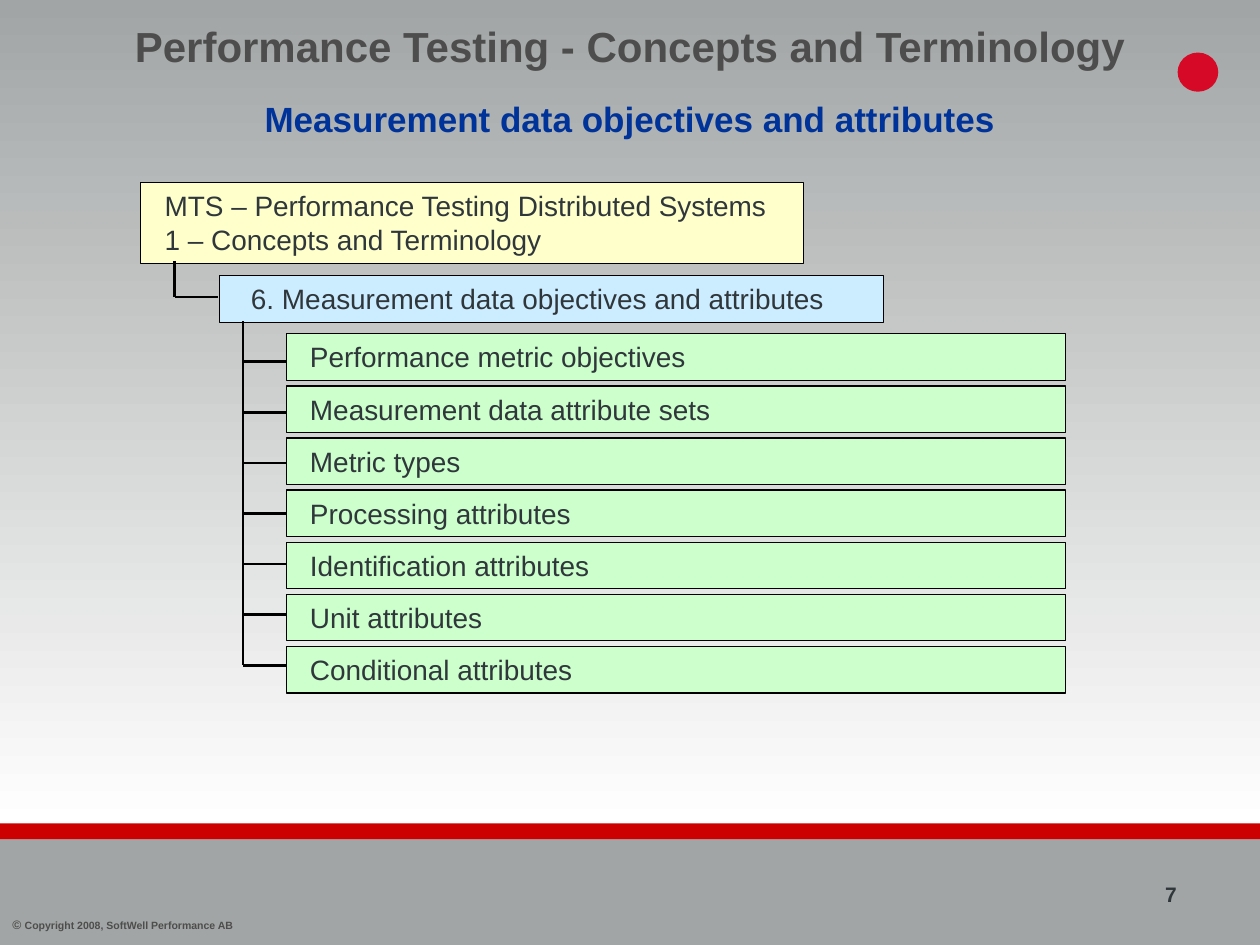
import pptx
import pptx.util
import pptx.dml.color
import pptx.enum.dml
import pptx.enum.shapes
import pptx.enum.text
from dataclasses import dataclass
from lxml import etree

Cm = pptx.util.Cm
Pt = pptx.util.Pt
RGB = pptx.dml.color.RGBColor.from_string
SHAPE = pptx.enum.shapes.MSO_SHAPE
ALIGN = pptx.enum.text.PP_ALIGN
ANCHOR = pptx.enum.text.MSO_ANCHOR


@dataclass(frozen=True)
class Theme:
    font: str = "Arial"
    gray: str = "A2A5A5"
    white: str = "FFFFFF"
    red: str = "CC0000"
    emblem: str = "D60A27"
    heading: str = "4D4D4D"
    subheading: str = "003399"
    ink: str = "30373B"
    line: str = "000000"
    course: str = "FFFFCC"
    chapter: str = "CCECFF"
    topic: str = "CCFFCC"
    title_size: int = 24
    subtitle_size: int = 20
    body_size: int = 16
    number_size: int = 12
    sign_size: int = 7
    copyright_size: int = 6


theme = Theme()
deck = pptx.Presentation()
deck.slide_width = Cm(25.4)
deck.slide_height = Cm(19.05)
slide = deck.slides.add_slide(deck.slide_layouts[6])


def add_block(kind, left, top, width, height, color, outline=None):
    block = slide.shapes.add_shape(kind, Cm(left), Cm(top), Cm(width), Cm(height))
    block.shadow.inherit = False
    block.fill.solid()
    block.fill.fore_color.rgb = RGB(color)
    if outline:
        block.line.color.rgb = RGB(outline)
        block.line.width = Pt(0.75)
    else:
        block.line.fill.background()
    return block


def write(holder, text, size, color, bold=False, align=ALIGN.LEFT, anchor=ANCHOR.TOP):
    frame = holder.text_frame
    frame.word_wrap = True
    frame.vertical_anchor = anchor
    paragraph = frame.paragraphs[0]
    paragraph.text = text
    paragraph.alignment = align
    paragraph.font.name = theme.font
    paragraph.font.size = Pt(size)
    paragraph.font.bold = bold
    paragraph.font.color.rgb = RGB(color)
    return paragraph


backdrop = add_block(SHAPE.RECTANGLE, 0, 0, 25.4, 16.66, theme.white)
backdrop.fill.gradient()
backdrop.fill.gradient_angle = 270
for stop, color, position in zip(backdrop.fill.gradient_stops, (theme.gray, theme.white), (0, 1)):
    stop.color.rgb = RGB(color)
    stop.position = position

add_block(SHAPE.RECTANGLE, 0, 16.6, 25.4, 0.33, theme.red)
add_block(SHAPE.RECTANGLE, 0, 16.92, 25.4, 2.13, theme.gray)
add_block(SHAPE.OVAL, 23.74, 1.06, 0.82, 0.79, theme.emblem)

copyright_line = slide.shapes.add_textbox(Cm(0), Cm(18.36), Cm(6.35), Cm(0.56))
notice = write(copyright_line, "© ", theme.sign_size, theme.heading, bold=True)
owner = notice.add_run()
owner.text = "Copyright 2008, SoftWell Performance AB"
owner.font.size = Pt(theme.copyright_size)

page_number = slide.shapes.add_textbox(Cm(23.24), Cm(17.65), Cm(2.16), Cm(0.76))
write(page_number, "7", theme.number_size, theme.ink, bold=True)

title = slide.shapes.add_textbox(Cm(0), Cm(0), Cm(25.4), Cm(1.85))
write(title, "Performance Testing - Concepts and Terminology", theme.title_size,
      theme.heading, True, ALIGN.CENTER, ANCHOR.MIDDLE)
subtitle = slide.shapes.add_textbox(Cm(0), Cm(1.85), Cm(25.4), Cm(1.09))
write(subtitle, "Measurement data objectives and attributes", theme.subtitle_size,
      theme.subheading, True, ALIGN.CENTER)

topics = [
    "Performance metric objectives",
    "Measurement data attribute sets",
    "Metric types",
    "Processing attributes",
    "Identification attributes",
    "Unit attributes",
    "Conditional attributes",
]
outline = [
    ("MTS – Performance Testing Distributed Systems\n1 – Concepts and Terminology",
     2.84, 3.68, 13.36, 1.63, theme.course, 0.23),
    ("6. Measurement data objectives and attributes",
     4.42, 5.56, 13.39, 0.94, theme.chapter, 0.39),
]
for row, topic in enumerate(topics):
    outline.append((topic, 5.77, 6.73 + 1.05 * row, 15.71, 0.94, theme.topic, 0.23))

for text, left, top, width, height, color, indent in outline:
    entry = add_block(SHAPE.RECTANGLE, left, top, width, height, color, theme.line)
    paragraph = write(entry, text, theme.body_size, theme.ink)
    paragraph._p.get_or_add_pPr().set("marL", str(Cm(indent)))

trunk_x, branch_y, branch_step = 4.9, 7.29, 1.02
branches = [branch_y + branch_step * row for row in range(len(topics))]
links = [
    (3.52, 5.26, 3.52, 5.99),
    (3.52, 5.99, 4.4, 5.99),
    (trunk_x, 6.48, trunk_x, branches[-1]),
]
links += [(trunk_x, y, 5.79, y) for y in branches]
for ends in links:
    link = slide.shapes.add_connector(
        pptx.enum.shapes.MSO_CONNECTOR.STRAIGHT, *(Cm(end) for end in ends))
    link.line.color.rgb = RGB(theme.line)
    link.line.width = Pt(1.5)
    etree.SubElement(link._element.spPr, pptx.oxml.ns.qn("a:effectLst"))

deck.save("out.pptx")
